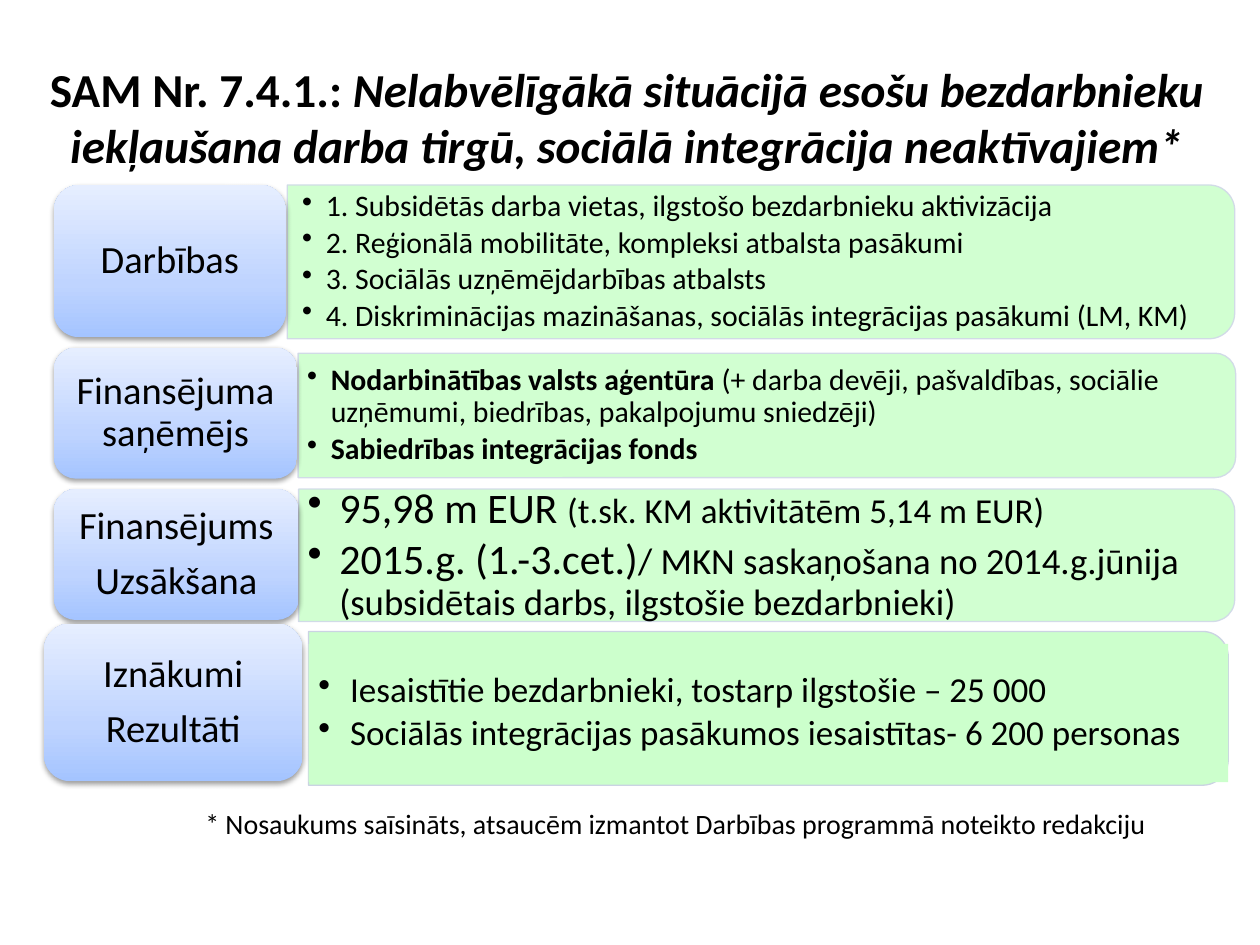
from lxml import etree
from pptx import Presentation
from pptx.dml.color import RGBColor
from pptx.enum.shapes import MSO_SHAPE as SHAPE
from pptx.enum.text import MSO_ANCHOR as ANCHOR, PP_ALIGN as ALIGN
from pptx.oxml import parse_xml
from pptx.oxml.ns import nsdecls, qn
from pptx.util import Cm, Pt

COLORS = {"text": "000000", "panel": "CCFFCC", "edge": "D0D8E8", "last_edge": "CBD3E3",
          "low": "A4C4FF", "mid": "BFD4FF", "high": "E6EEFF"}
FONT = "Calibri"

# Boxes are left, top, width, height in cm; a run is text, size, bold.
ROWS = [
    {"label": ["Darbības"], "label_box": (1.09, 3.73, 4.67, 3.07),
     "panel_box": (5.79, 3.73, 19.1, 3.1), "pad": 0.15, "inset": (0.3, 0.15), "indent": 0.48,
     "items": [[("1. Subsidētās darba vietas, ilgstošo bezdarbnieku aktivizācija", 17, False)],
               [("2. Reģionālā mobilitāte, kompleksi atbalsta pasākumi", 17, False)],
               [("3. Sociālās uzņēmējdarbības atbalsts", 17, False)],
               [("4. Diskriminācijas mazināšanas, sociālās integrācijas pasākumi (LM, KM)",
                 17, False)]]},
    {"label": ["Finansējuma saņēmējs"], "label_box": (1.09, 7.01, 4.9, 2.64),
     "panel_box": (6.01, 7.12, 18.9, 2.51), "pad": 0.13, "inset": (0.18, 0.1), "indent": 0.48,
     "items": [[("Nodarbinātības valsts aģentūra ", 17, True),
                ("(+ darba devēji, pašvaldības, sociālie uzņēmumi, biedrības, "
                 "pakalpojumu sniedzēji)", 17, False)],
               [("Sabiedrības integrācijas fonds", 17, True)]]},
    {"label": ["Finansējums", "Uzsākšana"], "label_box": (1.09, 9.86, 4.93, 2.64),
     "panel_box": (6.02, 9.86, 18.87, 2.67), "pad": 0.13, "inset": (0.18, 0.1), "indent": 0.64,
     "items": [[("95,98 m EUR ", 24, False), ("(t.sk. KM aktivitātēm 5,14 m EUR)", 20, False)],
               [("2015.g. (1.-3.cet.)", 24, False),
                ("/ MKN saskaņošana no 2014.g.jūnija (subsidētais darbs, "
                 "ilgstošie bezdarbnieki)", 21, False)]]},
    {"label": ["Iznākumi", "Rezultāti"], "label_box": (0.89, 12.57, 5.21, 3.18),
     "panel_box": (6.22, 12.73, 18.54, 3.1), "text_box": (6.22, 12.98, 18.54, 2.79),
     "inset": (0.2, 0.1), "indent": 0.64,
     "items": [[("Iesaistītie bezdarbnieki, tostarp ilgstošie – 25 000", 20, False)],
               [("Sociālās integrācijas pasākumos iesaistītas- 6 200 personas", 20, False)]]},
]


def rgb(name):
    return RGBColor.from_string(COLORS[name])


def add_run(p, text, size, bold=False, italic=False):
    r = p.add_run()
    r.text = text
    f = r.font
    f.name, f.size, f.bold, f.italic = FONT, Pt(size), bold, italic
    f.color.rgb = rgb("text")


def set_frame(tf, inset, anchor=ANCHOR.MIDDLE):
    tf.word_wrap = True
    tf.vertical_anchor = anchor
    tf.margin_left = tf.margin_right = Cm(inset[0])
    tf.margin_top = tf.margin_bottom = Cm(inset[1])


def paragraphs(tf, count):
    return [tf.paragraphs[0]] + [tf.add_paragraph() for _ in range(count - 1)]


def set_alpha(sp, percent):
    """Make the fill and line of a shape partly transparent."""
    for color in sp._element.spPr.iter(qn("a:srgbClr")):
        etree.SubElement(color, qn("a:alpha"), val=str(percent * 1000))


def set_bullet(p, indent):
    pPr = p._p.get_or_add_pPr()
    pPr.set("marL", str(Cm(indent)))
    pPr.set("indent", str(-Cm(indent)))
    etree.SubElement(pPr, qn("a:buChar"), char="•")


def add_title(s, box):
    sp = s.shapes.title
    sp.left, sp.top, sp.width, sp.height = map(Cm, box)
    set_frame(sp.text_frame, (0.25, 0.13))
    p = sp.text_frame.paragraphs[0]
    p.alignment = ALIGN.CENTER
    add_run(p, "SAM Nr. 7.4.1.: ", 27, True)
    add_run(p, "Nelabvēlīgākā situācijā esošu bezdarbnieku iekļaušana darba tirgū, "
               "sociālā integrācija neaktīvajiem*", 27, True, True)


def add_panel(s, box, edge, alpha):
    """Draw a panel rounded on its right side: a top-rounded shape turned by 90 degrees."""
    x, y, w, h = box
    sp = s.shapes.add_shape(SHAPE.ROUND_2_SAME_RECTANGLE, Cm(x + (w - h) / 2),
                            Cm(y + (h - w) / 2), Cm(h), Cm(w))
    sp.rotation = 90
    sp.shadow.inherit = False
    sp.fill.solid()
    sp.fill.fore_color.rgb = rgb("panel")
    sp.line.color.rgb = rgb(edge)
    sp.line.width = Pt(0.75)
    set_alpha(sp, alpha)


def add_items(s, box, row):
    sp = s.shapes.add_textbox(*map(Cm, box))
    tf = sp.text_frame
    set_frame(tf, row["inset"])
    for p, runs in zip(paragraphs(tf, len(row["items"])), row["items"]):
        p.level = 1
        p.line_spacing = 0.9
        p.space_after = Pt(round(0.15 * runs[0][1], 1))
        set_bullet(p, row["indent"])
        for run in runs:
            add_run(p, *run)
    return sp


def add_label(s, box, lines):
    sp = s.shapes.add_shape(SHAPE.ROUNDED_RECTANGLE, *map(Cm, box))
    sp.line.fill.background()
    stops = "".join(f'<a:gs pos="{pos}"><a:srgbClr val="{COLORS[name]}"/></a:gs>'
                    for pos, name in [(0, "low"), (35000, "mid"), (100000, "high")])
    spPr = sp._element.spPr
    spPr.find(qn("a:prstGeom")).addnext(parse_xml(
        f'<a:gradFill {nsdecls("a")} rotWithShape="1"><a:gsLst>{stops}</a:gsLst>'
        '<a:lin ang="16200000" scaled="0"/></a:gradFill>'))
    spPr.append(parse_xml(
        f'<a:effectLst {nsdecls("a")}><a:outerShdw blurRad="40000" dist="20000" dir="5400000" '
        'rotWithShape="0"><a:srgbClr val="000000"><a:alpha val="38000"/></a:srgbClr>'
        '</a:outerShdw></a:effectLst>'))
    set_frame(sp.text_frame, (0.23, 0.13))
    for p, line in zip(paragraphs(sp.text_frame, len(lines)), lines):
        p.alignment = ALIGN.CENTER
        p.line_spacing = 0.9
        p.space_after = Pt(7.7)
        add_run(p, line, 22)


def add_row(s, row):
    box = row["panel_box"]
    if "text_box" in row:
        add_panel(s, box, "last_edge", 100)
        sp = add_items(s, row["text_box"], row)
        sp.fill.solid()
        sp.fill.fore_color.rgb = rgb("panel")
    else:
        x, y, w, h = box
        pad = row["pad"]
        add_panel(s, box, "edge", 90)
        add_items(s, (x, y + pad, w - pad, h - 2 * pad), row)
    add_label(s, row["label_box"], row["label"])


def add_footnote(s, box):
    tf = s.shapes.add_textbox(*map(Cm, box)).text_frame
    set_frame(tf, (0.25, 0.13), ANCHOR.TOP)
    add_run(tf.paragraphs[0],
            "* Nosaukums saīsināts, atsaucēm izmantot Darbības programmā noteikto redakciju", 16)


def main():
    prs = Presentation()
    prs.slide_width, prs.slide_height = Cm(25.4), Cm(19.05)
    s = prs.slides.add_slide(prs.slide_layouts[5])
    add_title(s, (0.71, 0.76, 23.85, 3.18))
    for row in ROWS:
        add_row(s, row)
    add_footnote(s, (3.89, 16.13, 21.21, 0.94))
    prs.save("out.pptx")


if __name__ == "__main__":
    main()
